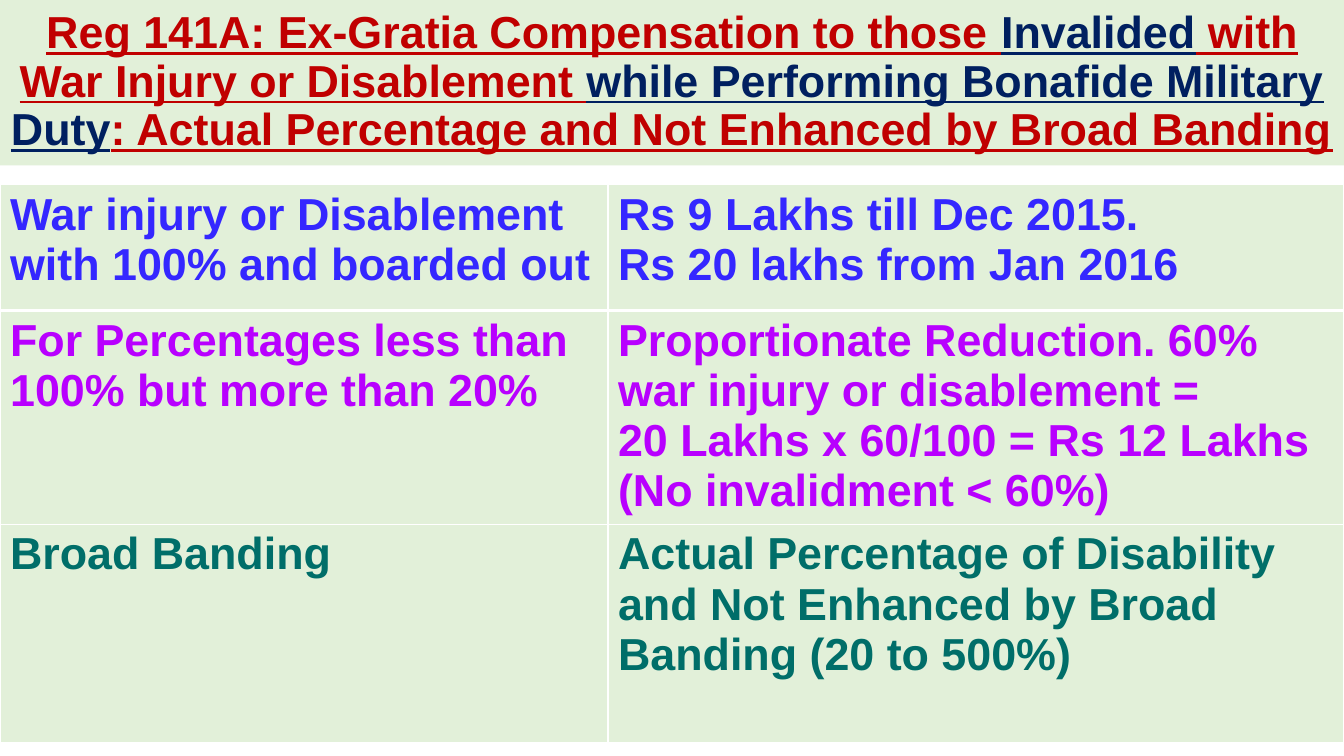
from pptx import Presentation
from pptx.dml.color import RGBColor
from pptx.enum.text import MSO_ANCHOR, MSO_AUTO_SIZE, PP_ALIGN
from pptx.oxml import parse_xml
from pptx.oxml.ns import nsdecls
from pptx.util import Inches, Pt

MIDDLE = MSO_ANCHOR.MIDDLE
TOP = MSO_ANCHOR.TOP
FIXED = MSO_AUTO_SIZE.NONE
CENTER = PP_ALIGN.CENTER
WIDE, HIGH = 13.33, 7.5
TITLE_ONLY = 5

GREEN, WHITE = "E2F0D9", "FFFFFF"
RED, NAVY = "C00000", "002060"
BLUE, PURPLE, TEAL = "3427FF", "B800FF", "006E69"

HEADING = [
    ("Reg 141A: Ex-Gratia Compensation to those ", RED),
    ("Invalided", NAVY),
    (" with War Injury or Disablement ", RED),
    ("while Performing Bonafide Military Duty", NAVY),
    (": Actual Percentage and Not Enhanced by Broad Banding", RED),
]
# Each row: height in inches, colour, paragraphs of the left and right cell
ROWS = [
    (1.25, BLUE,
     ["War injury or Disablement with 100% and boarded out"],
     ["Rs 9 Lakhs till Dec 2015.", "Rs 20 lakhs from Jan 2016"]),
    (2.12, PURPLE,
     ["For Percentages less than 100% but more than 20%"],
     ["Proportionate Reduction. 60% war injury or disablement =",
      "20 Lakhs x 60/100 = Rs 12 Lakhs",
      "(No invalidment < 60%)"]),
    (2.17, TEAL,
     ["Broad Banding"],
     ["Actual Percentage of Disability and Not Enhanced by Broad Banding "
      "(20 to 500%)"]),
]


def color(code):
    return RGBColor.from_string(code)


class Page:
    """Holds the text style and the current slide."""

    style = {"name": "Arial", "size": Pt(32), "bold": True}

    def __init__(self, deck):
        self.wide, self.high = deck.slide_width, deck.slide_height
        self.slide = deck.slides.add_slide(deck.slide_layouts[TITLE_ONLY])

    def box(self, left, top, width, height):
        """Turn shares of the slide into lengths."""
        return (int(left * self.wide), int(top * self.high),
                int(width * self.wide), int(height * self.high))

    def fill(self, item, code):
        item.fill.solid()
        item.fill.fore_color.rgb = color(code)

    def words(self, para, text, code, **extra):
        run = para.add_run()
        run.text = text
        for key, value in {**self.style, **extra}.items():
            setattr(run.font, key, value)
        run.font.color.rgb = color(code)

    def title(self, parts, area):
        shape = self.slide.shapes.title
        shape.left, shape.top, shape.width, shape.height = self.box(*area)
        self.fill(shape, GREEN)
        frame = shape.text_frame
        frame.auto_size, frame.word_wrap = FIXED, True
        frame.vertical_anchor = MIDDLE
        para = frame.paragraphs[0]
        para.alignment, para.line_spacing = CENTER, 0.9
        for text, code in parts:
            self.words(para, text, code, underline=True)

    def edges(self, cell, widths):
        props = cell._tc.get_or_add_tcPr()
        for spot, (side, width) in enumerate(zip("LRTB", widths)):
            props.insert(spot, parse_xml(
                f'<a:ln{side} {nsdecls("a")} w="{Pt(width)}"><a:solidFill>'
                f'<a:srgbClr val="{WHITE}"/></a:solidFill></a:ln{side}>'))

    def cell(self, cell, lines, code, widths):
        self.fill(cell, GREEN)
        self.edges(cell, widths)
        cell.vertical_anchor = TOP
        frame = cell.text_frame
        for spot, line in enumerate(lines):
            para = frame.add_paragraph() if spot else frame.paragraphs[0]
            self.words(para, line, code)

    def table(self, rows, cols, area):
        grid = self.slide.shapes.add_table(
            len(rows), len(cols), *self.box(*area)).table
        grid.first_row = grid.horz_banding = False
        for col, share in zip(grid.columns, cols):
            col.width = int(share * self.wide)
        for spot, (height, code, *texts) in enumerate(rows):
            grid.rows[spot].height = Inches(height)
            # A thick rule parts the first row from the rest
            widths = (1, 1, 3 if spot == 1 else 1, 3 if spot == 0 else 1)
            for col, lines in enumerate(texts):
                self.cell(grid.cell(spot, col), lines, code, widths)


def main():
    deck = Presentation()
    deck.slide_width, deck.slide_height = Inches(WIDE), Inches(HIGH)
    page = Page(deck)

    # Heading band
    page.title(HEADING, (0, 0, 1, 1.64 / HIGH))

    # Compensation table
    tall = sum(row[0] for row in ROWS)
    left = 6.03 / WIDE
    page.table(ROWS, (left, 1 - left), (0, 1.83 / HIGH, 1, tall / HIGH))

    deck.save("out.pptx")


if __name__ == "__main__":
    main()
